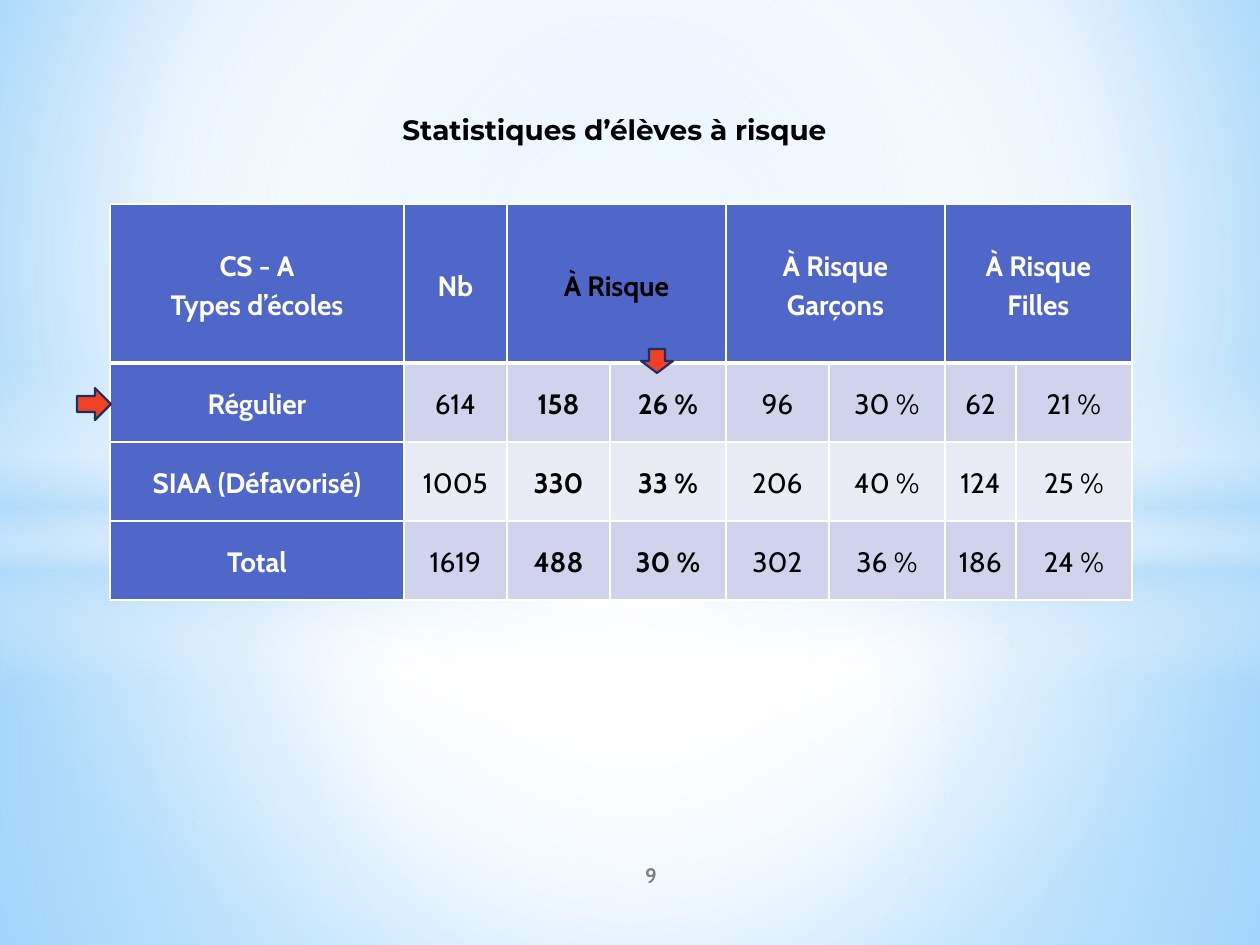
"""Build the slide on statistics of pupils at risk."""
import pptx
import pptx.util
import pptx.oxml
import pptx.oxml.ns
import pptx.dml.color
import pptx.enum.text
import pptx.enum.shapes

SCALE = 914400 / 126
SHAPE = pptx.enum.shapes.MSO_SHAPE
ANCHOR = pptx.enum.text.MSO_ANCHOR
qn = pptx.oxml.ns.qn

BLUE, WHITE, BLACK = "4E67C8", "FFFFFF", "000000"
BANDS = ("D0D3EB", "E9EBF5")

TITLE = "Statistiques d’élèves à risque"
HEADERS = [
    (0, 1, "CS - A\nTypes d’écoles", WHITE),
    (1, 1, "Nb", WHITE),
    (2, 2, "À Risque", BLACK),
    (4, 2, "À Risque\nGarçons", WHITE),
    (6, 2, "À Risque\nFilles", WHITE),
]
ROWS = [
    ("Régulier", "614", "158", "26 %", "96", "30 %", "62", "21 %"),
    ("SIAA (Défavorisé)", "1005", "330", "33 %", "206", "40 %", "124", "25 %"),
    ("Total", "1619", "488", "30 %", "302", "36 %", "186", "24 %"),
]
BOLD_COLS = (0, 2, 3)
COL_WIDTHS = (294, 103, 103, 116, 103, 116, 71, 116)
ROW_HEIGHTS = (159, 79, 79, 79)
TABLE_LEFT, TABLE_TOP = 110, 204

CENTER = '<a:path path="circle"><a:fillToRect l="50000" t="50000" r="50000" b="50000"/></a:path>'
BACKDROP = '<a:path path="circle"><a:fillToRect l="20000" t="10000" r="20000" b="60000"/></a:path>'
VERTICAL = '<a:lin ang="5400000" scaled="0"/>'
BACKDROP_STOPS = [(0, "9ED5FF", 100), (60, WHITE, 100), (100, "5BB9FF", 100)]
GLOWS = [
    (SHAPE.RECTANGLE, (0, 533, 1260, 412), CENTER,
     [(0, WHITE, 91), (37, WHITE, 76), (100, "B4DCFA", 79)]),
    (SHAPE.RECTANGLE, (0, 0, 1260, 533), CENTER,
     [(0, WHITE, 89), (48, WHITE, 62), (100, "B4DCFA", 79)]),
    (SHAPE.RECTANGLE, (0, 365, 1260, 315), VERTICAL,
     [(0, WHITE, 0), (29, WHITE, 30), (45, "B4DCFA", 40),
      (55, WHITE, 26), (65, "B4DCFA", 60), (100, WHITE, 0)]),
    (SHAPE.OVAL, (0, 220, 1260, 703), CENTER, [(0, WHITE, 100), (54, WHITE, 0)]),
]
ARROWS = [((641, 349, 32, 24), 0), ((78, 387, 32, 34), 270)]


def px(n):
    return pptx.util.Emu(round(n * SCALE))


def rgb(value):
    return pptx.dml.color.RGBColor.from_string(value)


def write(tf, text, size=16, font="Cabin", color=BLACK, bold=False, spacing=None):
    tf.word_wrap = True
    for i, line in enumerate(text.split("\n")):
        p = tf.paragraphs[0] if i == 0 else tf.add_paragraph()
        p.alignment = pptx.enum.text.PP_ALIGN.CENTER
        p.line_spacing = spacing
        r = p.add_run()
        r.text = line
        r.font.size = pptx.util.Pt(size)
        r.font.name = font
        r.font.bold = bold
        r.font.color.rgb = rgb(color)


def set_gradient(fill, parent, stops, direction):
    fill.solid()
    gs = "".join(
        f'<a:gs pos="{pos * 1000}"><a:srgbClr val="{color}">'
        f'<a:alpha val="{alpha * 1000}"/></a:srgbClr></a:gs>'
        for pos, color, alpha in stops)
    xml = (f'<a:gradFill {pptx.oxml.ns.nsdecls("a")} rotWithShape="1">'
           f'<a:gsLst>{gs}</a:gsLst>{direction}</a:gradFill>')
    parent.replace(parent.find(qn("a:solidFill")), pptx.oxml.parse_xml(xml))


def add_shape(s, kind, box):
    sp = s.shapes.add_shape(kind, *map(px, box))
    sp.shadow.inherit = False
    return sp


def format_cell(cell, row, fill):
    tc_pr = cell._tc.get_or_add_tcPr()
    widths = {"L": 1, "R": 1, "T": 3 if row == 1 else 1, "B": 3 if row == 0 else 1}
    for side, width in widths.items():
        tc_pr.append(pptx.oxml.parse_xml(
            f'<a:ln{side} {pptx.oxml.ns.nsdecls("a")} w="{width * 12700}">'
            f'<a:solidFill><a:srgbClr val="{WHITE}"/></a:solidFill></a:ln{side}>'))
    cell.fill.solid()
    cell.fill.fore_color.rgb = rgb(fill)
    cell.vertical_anchor = ANCHOR.MIDDLE
    cell.margin_left = cell.margin_right = px(6)
    cell.margin_top = cell.margin_bottom = 0


def add_stats_table(s):
    table = s.shapes.add_table(
        len(ROW_HEIGHTS), len(COL_WIDTHS), px(TABLE_LEFT), px(TABLE_TOP),
        px(sum(COL_WIDTHS)), px(sum(ROW_HEIGHTS))).table
    for col, width in zip(table.columns, COL_WIDTHS):
        col.width = px(width)
    for row, height in zip(table.rows, ROW_HEIGHTS):
        row.height = px(height)
    for r in range(len(ROW_HEIGHTS)):
        for c in range(len(COL_WIDTHS)):
            fill = BLUE if r == 0 or c == 0 else BANDS[(r - 1) % 2]
            format_cell(table.cell(r, c), r, fill)
    for c, span, text, color in HEADERS:
        cell = table.cell(0, c)
        if span > 1:
            cell.merge(table.cell(0, c + span - 1))
        write(cell.text_frame, text, color=color, bold=True, spacing=1.15)
    for r, values in enumerate(ROWS, 1):
        for c, text in enumerate(values):
            write(table.cell(r, c).text_frame, text, spacing=1.15,
                  color=BLACK if c else WHITE, bold=c in BOLD_COLS)


def main():
    prs = pptx.Presentation()
    prs.slide_width, prs.slide_height = px(1260), px(945)
    s = prs.slides.add_slide(prs.slide_layouts[5])

    fill = s.background.fill
    fill.solid()
    set_gradient(fill, s.element.find(f".//{qn('p:bgPr')}"), BACKDROP_STOPS, BACKDROP)
    for kind, box, direction, stops in GLOWS:
        sp = add_shape(s, kind, box)
        set_gradient(sp.fill, sp.element.spPr, stops, direction)
        sp.line.fill.background()

    number = s.shapes.add_textbox(*map(px, (525, 850, 252, 50)))
    number.text_frame.vertical_anchor = ANCHOR.MIDDLE
    write(number.text_frame, "9", size=12, color="808080", bold=True)

    title = s.shapes.title
    s.shapes.element.append(title.element)
    title.left, title.top, title.width, title.height = map(px, (123, 106, 983, 47))
    title.text_frame.vertical_anchor = ANCHOR.TOP
    title.text_frame.auto_size = pptx.enum.text.MSO_AUTO_SIZE.SHAPE_TO_FIT_TEXT
    write(title.text_frame, TITLE, font="Montserrat", bold=True)

    add_stats_table(s)
    for box, rotation in ARROWS:
        sp = add_shape(s, SHAPE.DOWN_ARROW, box)
        sp.rotation = rotation
        sp.fill.solid()
        sp.fill.fore_color.rgb = rgb("F14124")
        sp.line.color.rgb = rgb("1F2E69")
        sp.line.width = pptx.util.Pt(1.25)
    prs.save("out.pptx")


if __name__ == "__main__":
    main()
